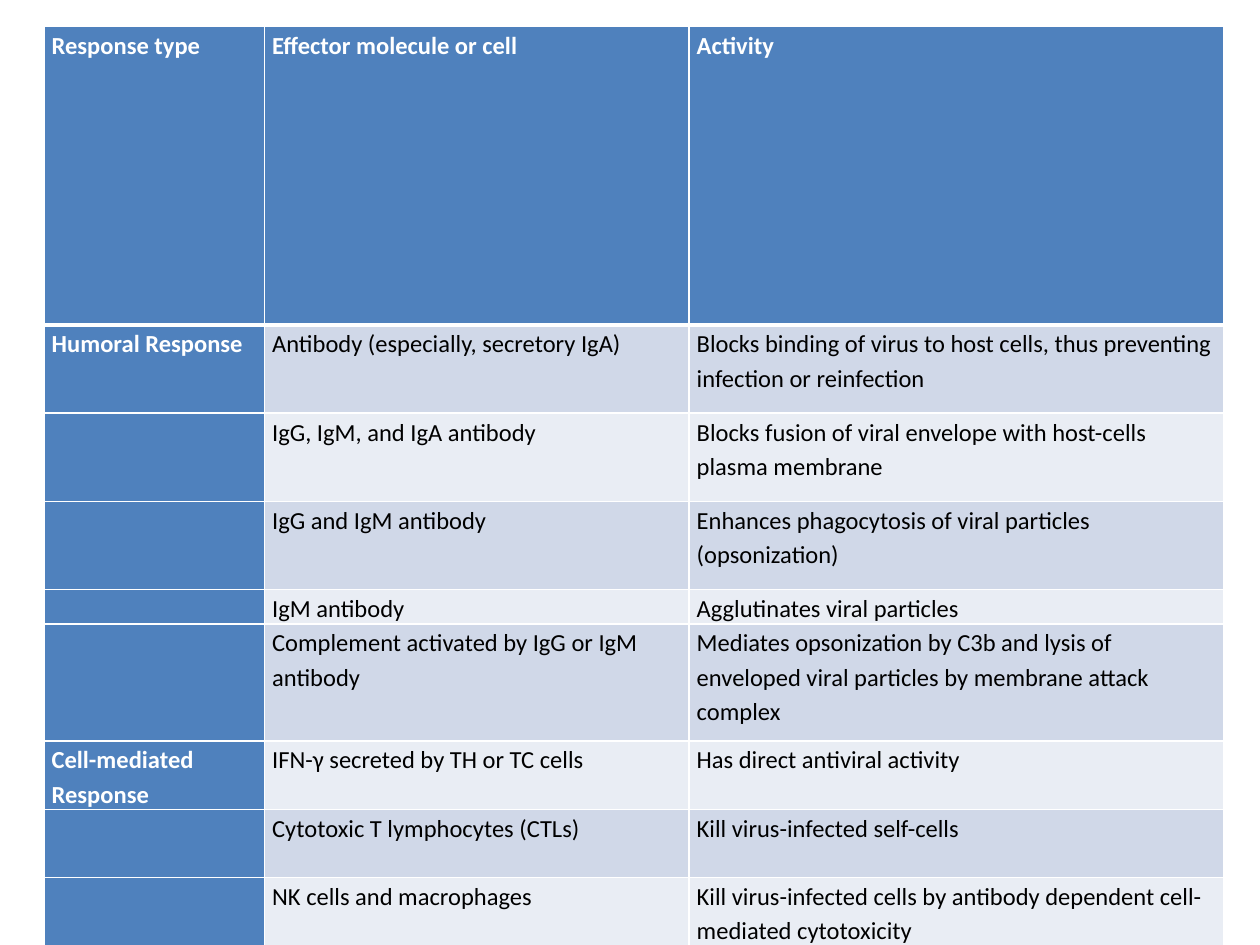
import dataclasses
import itertools

import lxml.etree
import pptx
import pptx.dml.color
import pptx.oxml.ns
import pptx.table
import pptx.util

SLIDE_WIDTH, SLIDE_HEIGHT = 10, 7.5
TABLE_LEFT, TABLE_TOP = 0.35, 0.21
COLUMN_WIDTHS = (1.75, 3.37, 4.24)

FONT_NAME = "Calibri"
FONT_SIZE = 14
WHITE, BLACK = "FFFFFF", "000000"
HEADING_BLUE = "4F81BD"
BAND_COLOURS = ("D0D8E8", "E9EDF4")


@dataclasses.dataclass(frozen=True)
class ResponseRow:
    height: float
    response: str
    effector: str
    activity: str


HEADER = ResponseRow(2.37, "Response type", "Effector molecule or cell", "Activity")
BODY = (
    ResponseRow(0.7, "Humoral Response", "Antibody (especially, secretory IgA)",
                "Blocks binding of virus to host cells, thus preventing infection or reinfection"),
    ResponseRow(0.7, "", "IgG, IgM, and IgA antibody",
                "Blocks fusion of viral envelope with host-cells plasma membrane"),
    ResponseRow(0.7, "", "IgG and IgM antibody",
                "Enhances phagocytosis of viral particles (opsonization)"),
    ResponseRow(0.27, "", "IgM antibody", "Agglutinates viral particles"),
    ResponseRow(0.93, "", "Complement activated by IgG or IgM antibody",
                "Mediates opsonization by C3b and lysis of enveloped viral particles "
                "by membrane attack complex"),
    ResponseRow(0.54, "Cell-mediated Response", "IFN-γ secreted by TH or TC cells",
                "Has direct antiviral activity"),
    ResponseRow(0.54, "", "Cytotoxic T lymphocytes (CTLs)", "Kill virus-infected self-cells"),
    ResponseRow(0.54, "", "NK cells and macrophages",
                "Kill virus-infected cells by antibody dependent cell-mediated cytotoxicity"),
)


def colour(value: str) -> pptx.dml.color.RGBColor:
    return pptx.dml.color.RGBColor.from_string(value)


def write_text(cell: pptx.table._Cell, text: str, *, text_colour: str, bold: bool) -> None:
    """Fill a cell with one paragraph; an empty cell only keeps the font size."""
    cell.margin_left = cell.margin_right = pptx.util.Inches(0.06)
    cell.margin_top = cell.margin_bottom = 0
    paragraph = cell.text_frame.paragraphs[0]
    if not text:
        end = lxml.etree.SubElement(paragraph._p, pptx.oxml.ns.qn("a:endParaRPr"))
        end.set("sz", str(FONT_SIZE * 100))
        return
    paragraph.line_spacing = 1.15
    run = paragraph.add_run()
    run.text = text
    run.font.name = FONT_NAME
    run.font.size = pptx.util.Pt(FONT_SIZE)
    run.font.bold = bold
    run.font.color.rgb = colour(text_colour)


def set_borders(cell: pptx.table._Cell, *, top: float = 1, bottom: float = 1) -> None:
    """Draw white borders, with widths in points."""
    properties = cell._tc.get_or_add_tcPr()
    for side, width in (("L", 1), ("R", 1), ("T", top), ("B", bottom)):
        line = lxml.etree.SubElement(properties, pptx.oxml.ns.qn(f"a:ln{side}"))
        line.set("w", str(pptx.util.Pt(width)))
        fill = lxml.etree.SubElement(line, pptx.oxml.ns.qn("a:solidFill"))
        lxml.etree.SubElement(fill, pptx.oxml.ns.qn("a:srgbClr")).set("val", WHITE)


def draw_row(table: pptx.table.Table, index: int, row: ResponseRow, band: str) -> None:
    table.rows[index].height = pptx.util.Inches(row.height)
    for column, text in enumerate((row.response, row.effector, row.activity)):
        cell = table.cell(index, column)
        heading = index == 0 or column == 0
        # Borders precede the fill in the cell's properties
        set_borders(cell, top=3 if index == 1 else 1, bottom=3 if index == 0 else 1)
        cell.fill.solid()
        cell.fill.fore_color.rgb = colour(HEADING_BLUE if heading else band)
        write_text(cell, text, text_colour=WHITE if heading else BLACK, bold=heading)


def main() -> None:
    presentation = pptx.Presentation()
    presentation.slide_width = pptx.util.Inches(SLIDE_WIDTH)
    presentation.slide_height = pptx.util.Inches(SLIDE_HEIGHT)
    slide = presentation.slides.add_slide(presentation.slide_layouts[6])

    # Table of antiviral responses
    rows = (HEADER, *BODY)
    table = slide.shapes.add_table(
        len(rows), len(COLUMN_WIDTHS),
        pptx.util.Inches(TABLE_LEFT), pptx.util.Inches(TABLE_TOP),
        pptx.util.Inches(sum(COLUMN_WIDTHS)),
        pptx.util.Inches(sum(row.height for row in rows)),
    ).table
    table.horz_banding = False
    for column, width in zip(table.columns, COLUMN_WIDTHS):
        column.width = pptx.util.Inches(width)

    # Header first, then alternating bands
    bands = itertools.chain((HEADING_BLUE,), itertools.cycle(BAND_COLOURS))
    for index, (row, band) in enumerate(zip(rows, bands)):
        draw_row(table, index, row, band)

    presentation.save("out.pptx")


if __name__ == "__main__":
    main()
